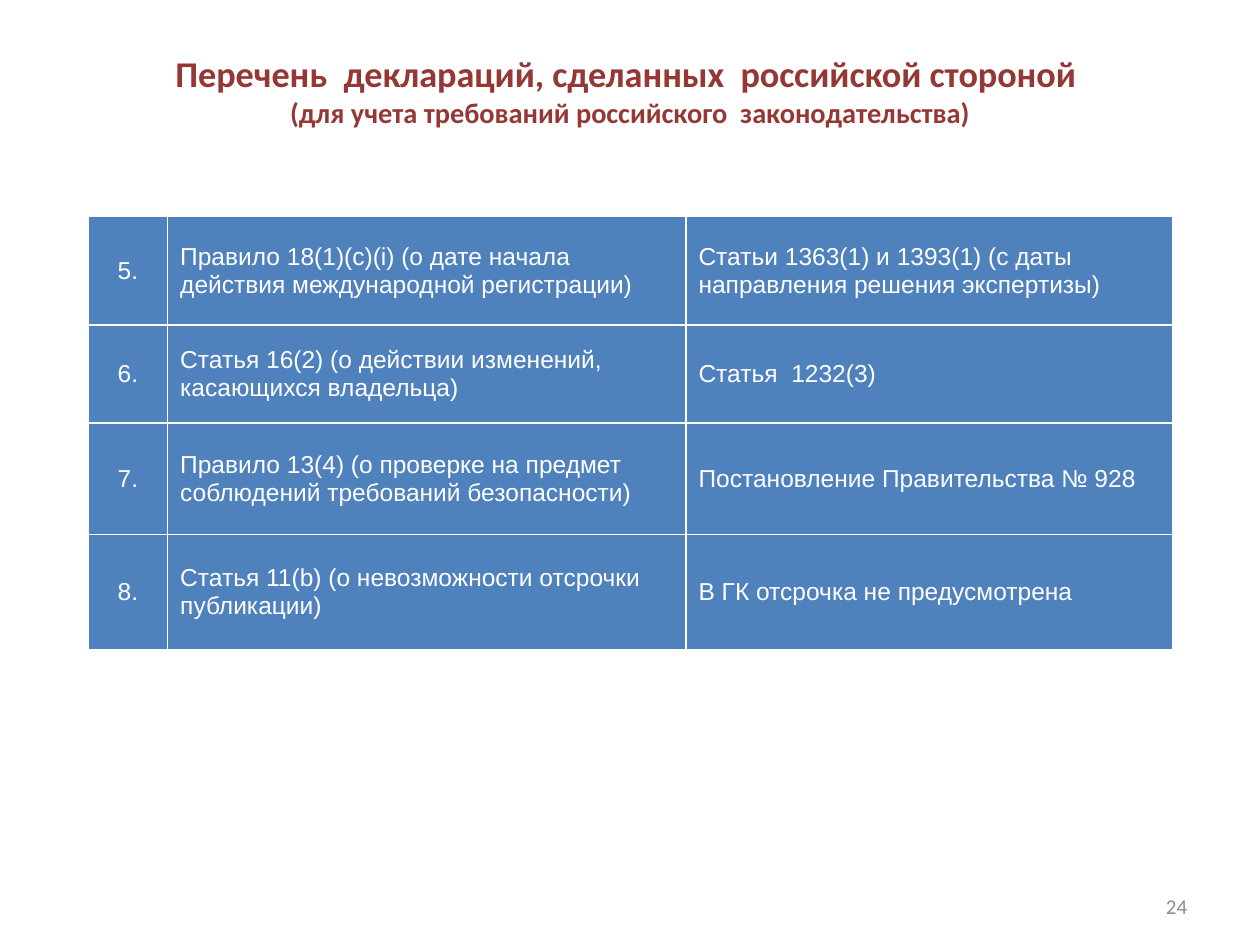
from lxml.etree import SubElement
from pptx import Presentation
from pptx.dml.color import RGBColor
from pptx.enum.text import MSO_ANCHOR, PP_ALIGN
from pptx.oxml.ns import qn
from pptx.util import Pt

TITLE = [
    ("Перечень  деклараций, сделанных  российской стороной ", 20.7),
    ("(для учета требований российского  законодательства)", 16.2),
]
DECLARATIONS = [
    ("5.", "Правило 18(1)(с)(i) (о дате начала действия международной регистрации)",
     "Статьи 1363(1) и 1393(1) (с даты направления решения экспертизы)"),
    ("6.", "Статья 16(2) (о действии изменений, касающихся владельца)",
     "Статья  1232(3)"),
    ("7.", "Правило 13(4) (о проверке на предмет соблюдений требований безопасности)",
     "Постановление Правительства № 928"),
    ("8.", "Статья 11(b) (о невозможности отсрочки публикации)",
     "В ГК отсрочка не предусмотрена"),
]
PAGE = "24"
COL_WIDTHS = [45.4, 296.2, 278]
ROW_HEIGHTS = [62, 56, 63.6, 65.8]

TITLE_FONT = {"name": "Calibri", "bold": True, "color": "953735"}
CELL_FONT = {"name": "Arial", "size": Pt(14), "bold": False, "color": "FFFFFF"}
PAGE_FONT = {"name": "Calibri", "size": Pt(12), "color": "8C8C8C"}


def rgb(value):
    return RGBColor.from_string(value)


def style(font, values):
    for key, value in values.items():
        if key == "color":
            font.color.rgb = rgb(value)
        else:
            setattr(font, key, value)


def add_text(s, left, top, width, height, align):
    tf = s.shapes.add_textbox(Pt(left), Pt(top), Pt(width), Pt(height)).text_frame
    tf.word_wrap = True
    tf.vertical_anchor = MSO_ANCHOR.MIDDLE
    p = tf.paragraphs[0]
    p.alignment = align
    return p


def add_run(p, text, values):
    r = p.add_run()
    r.text = text
    style(r.font, values)


def add_borders(cell, color, width):
    tc_pr = cell._tc.get_or_add_tcPr()
    for i, side in enumerate(("a:lnL", "a:lnR", "a:lnT", "a:lnB")):
        ln = SubElement(tc_pr, qn(side), w=str(Pt(width)))
        fill = SubElement(ln, qn("a:solidFill"))
        SubElement(fill, qn("a:srgbClr"), val=color)
        tc_pr.remove(ln)
        tc_pr.insert(i, ln)  # borders come before the fill


prs = Presentation()
prs.slide_width, prs.slide_height = Pt(720), Pt(540)
s = prs.slides.add_slide(prs.slide_layouts[6])

# Table of declarations
table = s.shapes.add_table(
    len(DECLARATIONS), len(COL_WIDTHS), Pt(50.4), Pt(123.8),
    Pt(sum(COL_WIDTHS)), Pt(sum(ROW_HEIGHTS))).table
table.first_row = table.horz_banding = False
for col, width in zip(table.columns, COL_WIDTHS):
    col.width = Pt(width)
for row, height, texts in zip(table.rows, ROW_HEIGHTS, DECLARATIONS):
    row.height = Pt(height)
    for i, (cell, text) in enumerate(zip(row.cells, texts)):
        cell.fill.solid()
        cell.fill.fore_color.rgb = rgb("4F81BD")
        cell.vertical_anchor = MSO_ANCHOR.MIDDLE
        add_borders(cell, "FFFFFF", 1)
        p = cell.text_frame.paragraphs[0]
        p.alignment = PP_ALIGN.LEFT if i else PP_ALIGN.CENTER
        add_run(p, text, CELL_FONT)

# Page number
p = add_text(s, 517.7, 499, 167.8, 37.4, PP_ALIGN.RIGHT)
add_run(p, PAGE, PAGE_FONT)

# Title, two lines of one paragraph
p = add_text(s, 84.2, 11.5, 551.5, 80, PP_ALIGN.CENTER)
for i, (text, size) in enumerate(TITLE):
    if i:
        p.add_line_break()
    add_run(p, text, {**TITLE_FONT, "size": Pt(size)})

prs.save("out.pptx")
